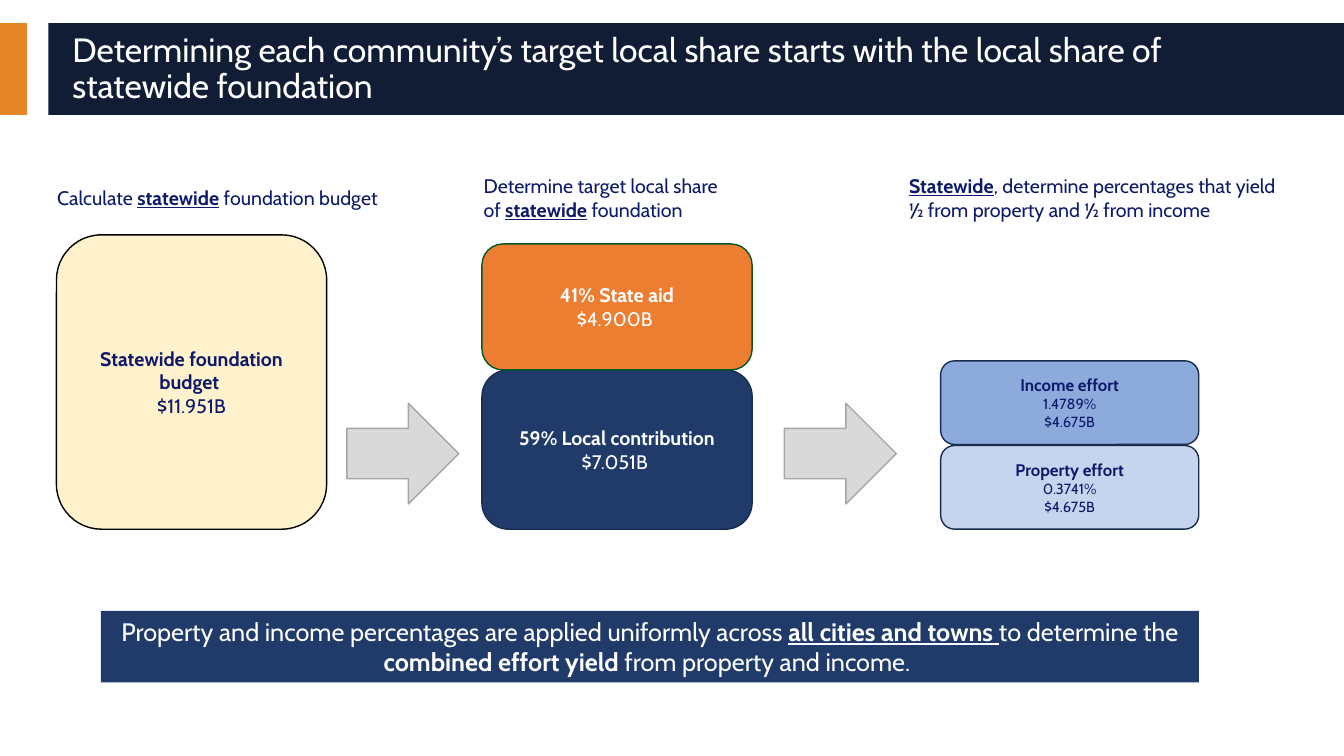
from dataclasses import dataclass, field
from typing import Optional

from pptx import Presentation
from pptx import util as u
from pptx.dml.color import RGBColor
from pptx.enum import shapes, text


@dataclass(frozen=True)
class Theme:
    font: str = "Cabin"
    title: float = 24
    banner: float = 18
    body: float = 14
    effort: float = 12
    detail: float = 10.5
    white: str = "FFFFFF"
    black: str = "000000"
    ink: str = "0D1969"
    midnight: str = "101D35"
    amber: str = "E38526"
    navy: str = "203B6A"
    navy_edge: str = "182C4E"
    orange: str = "ED7D31"
    green_edge: str = "005828"
    cream: str = "FFF2CC"
    blue: str = "8DAADC"
    pale_blue: str = "C6D4EE"
    grey: str = "D9D9D9"
    grey_edge: str = "A6A6A6"


THEME = Theme()
RECT = shapes.MSO_SHAPE.RECTANGLE
ROUNDED = shapes.MSO_SHAPE.ROUNDED_RECTANGLE
ARROW = shapes.MSO_SHAPE.RIGHT_ARROW
LEFT, CENTER = text.PP_ALIGN.LEFT, text.PP_ALIGN.CENTER


@dataclass(frozen=True)
class Words:
    wording: str
    size: float = THEME.body
    bold: bool = False
    underline: bool = False


@dataclass(frozen=True)
class Block:
    left: float
    top: float
    width: float
    height: float
    fill: Optional[str] = None
    edge: Optional[str] = None
    outline: shapes.MSO_SHAPE = ROUNDED
    ink: str = THEME.ink
    align: text.PP_ALIGN = CENTER
    spacing: float = 1.0
    right_inset: float = 0.1
    lines: list[list[Words]] = field(default_factory=list)


def write_words(paragraph, words: Words, ink: str) -> None:
    for number, part in enumerate(words.wording.split("\n")):
        if number:
            paragraph.add_line_break()
        run = paragraph.add_run()
        run.text = part
        formats = {
            "name": THEME.font,
            "size": u.Pt(words.size),
            "bold": words.bold,
            "underline": words.underline,
        }
        for attribute, value in formats.items():
            setattr(run.font, attribute, value)
        run.font.color.rgb = RGBColor.from_string(ink)


def draw_block(slide, block: Block) -> None:
    place = (u.Inches(n) for n in (block.left, block.top, block.width, block.height))
    drawn = slide.shapes.add_shape(block.outline, *place)
    drawn.shadow.inherit = False
    if block.fill:
        drawn.fill.solid()
        drawn.fill.fore_color.rgb = RGBColor.from_string(block.fill)
    else:
        drawn.fill.background()
    if block.edge:
        drawn.line.color.rgb = RGBColor.from_string(block.edge)
        drawn.line.width = u.Pt(1)
    else:
        drawn.line.fill.background()
    frame = drawn.text_frame
    formats = {
        "word_wrap": True,
        "vertical_anchor": text.MSO_ANCHOR.MIDDLE,
        "margin_right": u.Inches(block.right_inset),
    }
    for attribute, value in formats.items():
        setattr(frame, attribute, value)
    for number, line in enumerate(block.lines):
        paragraph = frame.add_paragraph() if number else frame.paragraphs[0]
        paragraph.alignment = block.align
        paragraph.line_spacing = block.spacing
        for words in line:
            write_words(paragraph, words, block.ink)


def caption(left: float, width: float, *line: Words) -> Block:
    return Block(left, 1.67, width, 0.58, align=LEFT, lines=[list(line)])


def amount(left: float, top: float, height: float, fill: str, edge: str,
           ink: str, label: str, value: str) -> Block:
    return Block(left, top, 2.68, height, fill, edge, ink=ink,
                 lines=[[Words(label, bold=True)], [Words(value)]])


def effort(top: float, fill: str, label: str, rate: str) -> Block:
    return Block(9.33, top, 2.56, 0.83, fill, THEME.navy_edge, lines=[
        [Words(label, THEME.effort, bold=True)],
        [Words(rate, THEME.detail)],
        [Words("$4.675B", THEME.detail)],
    ])


def arrow(left: float) -> Block:
    return Block(left, 4, 1.11, 1, THEME.grey, THEME.grey_edge, ARROW)


STATEWIDE = Words("statewide", bold=True, underline=True)
TITLE = Words("Determining each community’s target local share starts with "
              "the local share of statewide foundation", THEME.title)
BANNER = [
    Words("Property and income percentages are applied uniformly across ", THEME.banner),
    Words("all cities and towns ", THEME.banner, bold=True, underline=True),
    Words("to determine the ", THEME.banner),
    Words("combined effort yield ", THEME.banner, bold=True),
    Words("from property and income. ", THEME.banner),
]

BLOCKS = [
    Block(0, 0.23, 0.27, 0.91, THEME.amber, outline=RECT),
    Block(0.48, 0.23, 12.85, 0.91, THEME.midnight, outline=RECT),
    Block(0.62, 0.32, 12.44, 0.74, outline=RECT, ink=THEME.white, align=LEFT,
          spacing=0.9, right_inset=0.3, lines=[[TITLE]]),
    caption(0.44, 3.89, Words("Calculate "), STATEWIDE, Words(" foundation budget")),
    caption(4.67, 3.89, Words("Determine target local share \nof "), STATEWIDE,
            Words(" foundation")),
    caption(8.89, 4, Words("Statewide", bold=True, underline=True),
            Words(", determine percentages that yield ½ from property and ½ from income")),
    Block(1, 6.06, 10.89, 0.71, THEME.navy, outline=RECT, ink=THEME.white, lines=[BANNER]),
    amount(4.78, 3.67, 1.58, THEME.navy, THEME.navy_edge, THEME.white,
           "59% Local contribution", "$7.051B "),
    amount(4.78, 2.42, 1.25, THEME.orange, THEME.green_edge, THEME.white,
           "41% State aid", "$4.900B "),
    effort(4.42, THEME.pale_blue, "Property effort", "0.3741%"),
    effort(3.58, THEME.blue, "Income effort", "1.4789%"),
    amount(0.56, 2.33, 2.92, THEME.cream, THEME.black, THEME.ink,
           "Statewide foundation budget ", "$11.951B"),
    arrow(3.44),
    arrow(7.78),
]


def main() -> None:
    deck = Presentation()
    deck.slide_width, deck.slide_height = u.Inches(13.33), u.Inches(7.5)
    slide = deck.slides.add_slide(deck.slide_layouts[6])
    for block in BLOCKS:
        draw_block(slide, block)
    deck.save("out.pptx")


if __name__ == "__main__":
    main()
